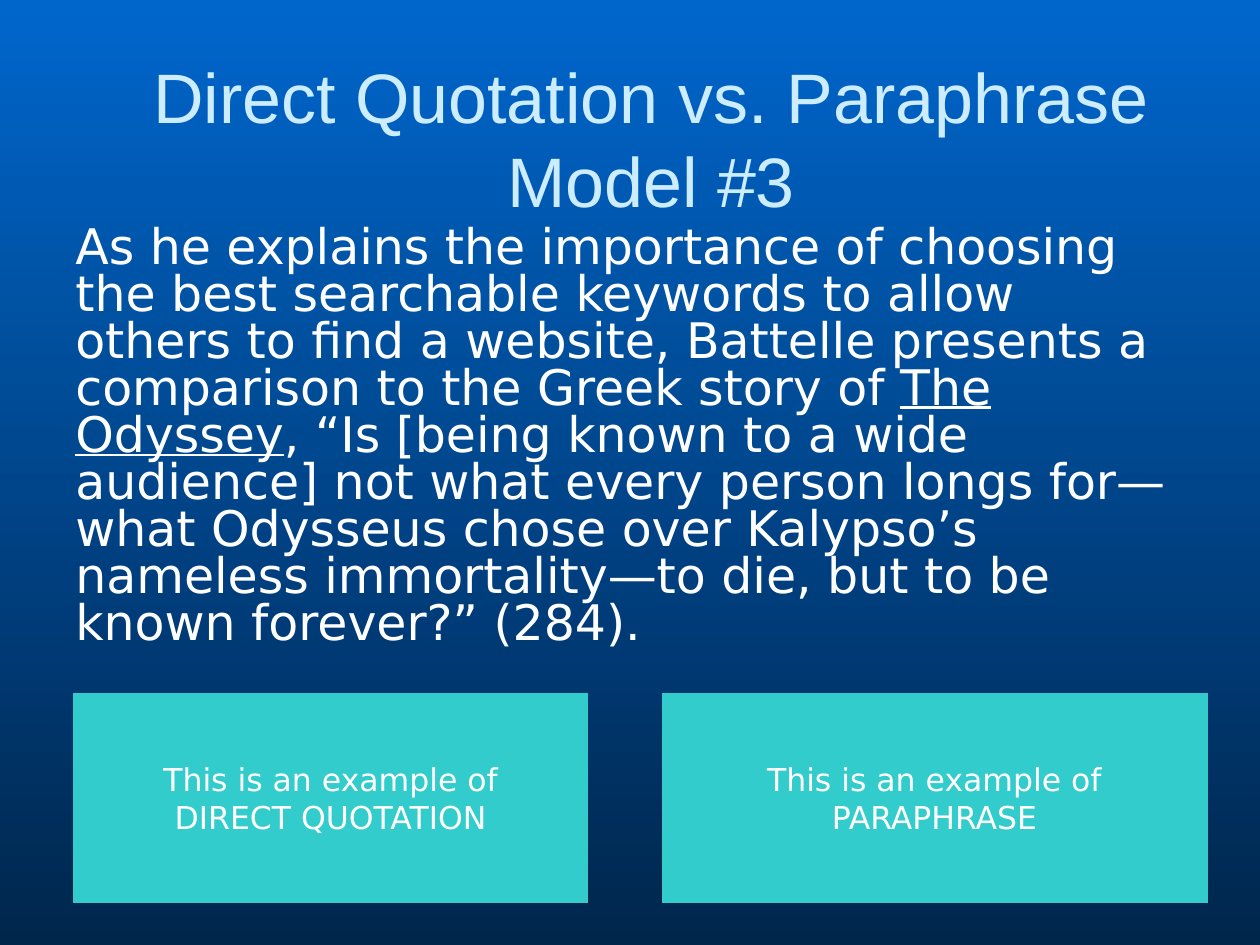
from dataclasses import dataclass
from pptx import Presentation as Deck
from pptx.dml.color import RGBColor as Rgb
from pptx.enum.shapes import MSO_SHAPE as Kind
from pptx.enum.text import MSO_ANCHOR as Anchor, PP_ALIGN as Align
from pptx.util import Inches, Pt

UNIT = Inches(1 / 12)


@dataclass(frozen=True)
class Theme:
    top: str = "0066CC"
    base: str = "00264C"
    head: str = "CCECFF"
    text: str = "FFFFFF"
    card: str = "33CCCC"
    sans: str = "Arial"
    body: str = "DejaVu Sans"
    big: int = 40
    mid: int = 28
    small: int = 18


LOOK = Theme()


def grid(*box):
    return [round(side * UNIT) for side in box]


def add_run(para, text, size, color=LOOK.text, face=LOOK.body, under=None):
    run = para.add_run()
    run.text = text
    font = run.font
    font.size, font.name, font.underline = Pt(size), face, under
    font.color.rgb = Rgb.from_string(color)


def paint(slide):
    fill = slide.background.fill
    fill.gradient()
    fill.gradient_angle = 270
    for stop, color in zip(fill.gradient_stops, (LOOK.top, LOOK.base)):
        stop.color.rgb = Rgb.from_string(color)
    for stop, place in zip(fill.gradient_stops, (0, 1)):
        stop.position = place


def add_text(slide, box, anchor):
    frame = slide.shapes.add_textbox(*grid(*box)).text_frame
    frame.word_wrap = True
    frame.vertical_anchor = anchor
    return frame.paragraphs[0]


def add_title(slide, box, lines):
    para = add_text(slide, box, Anchor.MIDDLE)
    para.alignment = Align.CENTER
    for i, line in enumerate(lines):
        if i:
            para.add_line_break()
        add_run(para, line, LOOK.big, LOOK.head, LOOK.sans)


def add_quote(slide, box, parts):
    para = add_text(slide, box, Anchor.TOP)
    para.line_spacing = 0.8
    para.space_before = Pt(0.2 * LOOK.mid)
    for text, under in parts:
        add_run(para, text, LOOK.mid, under=under)


def add_card(slide, box, lines):
    card = slide.shapes.add_shape(Kind.ACTION_BUTTON_CUSTOM, *grid(*box))
    card.shadow.inherit = False
    card.fill.solid()
    card.fill.fore_color.rgb = Rgb.from_string(LOOK.card)
    card.line.fill.background()
    frame = card.text_frame
    frame.word_wrap = False
    frame.vertical_anchor = Anchor.MIDDLE
    for i, line in enumerate(lines):
        para = frame.add_paragraph() if i else frame.paragraphs[0]
        para.alignment = Align.CENTER
        add_run(para, line, LOOK.small)


def main():
    deck = Deck()
    deck.slide_width, deck.slide_height = grid(120, 90)
    slide = deck.slides.add_slide(deck.slide_layouts[6])
    paint(slide)
    add_title(slide, (8, 5.6, 108, 15),
              ("Direct Quotation vs. Paraphrase", "Model #3"))
    add_quote(slide, (6, 21, 108, 42), (
        ("As he explains the importance of choosing the best searchable "
         "keywords to allow others to find a website, Battelle presents a "
         "comparison to the Greek story of ", None),
        ("The Odyssey", True),
        (", “Is [being known to a wide audience] not what every person "
         "longs for—what Odysseus chose over Kalypso’s nameless "
         "immortality—to die, but to be known forever?” (284).", None)))
    for left, width, name in ((7, 49, "DIRECT QUOTATION"),
                              (63, 52, "PARAPHRASE")):
        add_card(slide, (left, 66, width, 20), ("This is an example of", name))
    deck.save("out.pptx")


if __name__ == "__main__":
    main()
